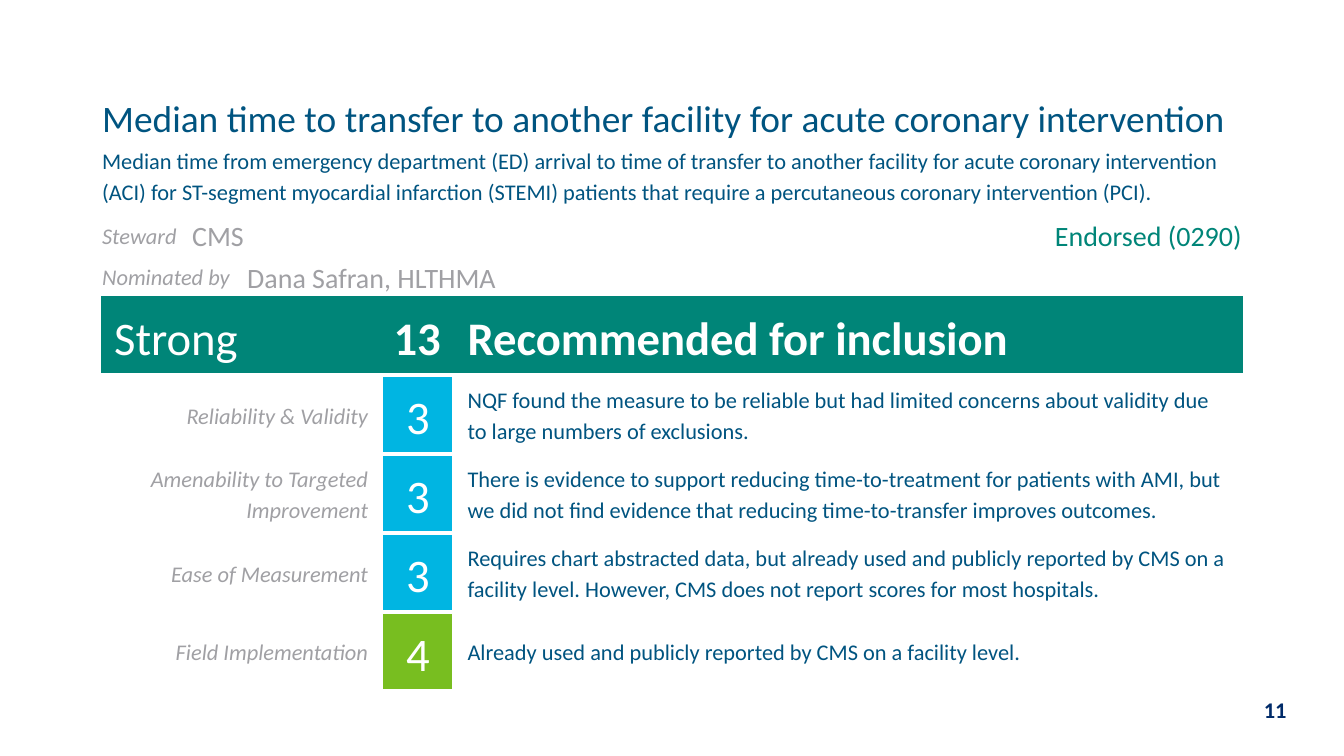
from dataclasses import dataclass, replace
from typing import Optional

from lxml import etree
from pptx import Presentation
from pptx import util as u
from pptx.dml.color import RGBColor
from pptx.enum import text
from pptx.oxml.ns import qn

COLORS = {
    "navy": "002B69", "blue": "005480", "gray": "A0A0A4", "teal": "008578",
    "cyan": "00B5E2", "green": "78BE20", "white": "FFFFFF",
}
ALIGN = {"l": text.PP_ALIGN.LEFT, "c": text.PP_ALIGN.CENTER, "r": text.PP_ALIGN.RIGHT}
SLIDE_WIDTH = 10
COLUMN_WIDTHS = [0.67, 0.41, 0.7, 0.31, 0.54, 3.29, 2.58]
INTRO_HEIGHTS = [0.4, 0.53, 0.3, 0.31]
RATING_HEIGHT = 0.58
TIGHT = (0.01, 0.01, 0.1, 0)
ROOMY = (0.1, 0.05, 0.1, 0.05)


@dataclass(frozen=True)
class Entry:
    row: int
    column: int
    span: int
    words: str
    size: float = 12
    color: str = "blue"
    bold: bool = False
    italic: bool = False
    align: str = "l"
    anchor: text.MSO_ANCHOR = text.MSO_ANCHOR.MIDDLE
    insets: tuple[float, float, float, float] = ROOMY
    fill: Optional[str] = None
    edges: str = ""


@dataclass(frozen=True)
class Criterion:
    name: str
    score: str
    finding: str
    color: str = "cyan"


def rgb(name: str) -> RGBColor:
    return RGBColor.from_string(COLORS[name])


def write(frame, words: str, *, size: float, color: str, bold: bool = False,
          italic: bool = False, align: str = "l", spacing: float = 1.0) -> None:
    paragraph = frame.paragraphs[0]
    paragraph.alignment = ALIGN[align]
    paragraph.line_spacing = spacing
    run = paragraph.add_run()
    run.text = words
    run.font.name = "Calibri"
    run.font.size = u.Pt(size)
    run.font.bold = bold
    run.font.italic = italic
    run.font.color.rgb = rgb(color)


def draw_edges(cell, white_edges: str) -> None:
    properties = cell._tc.get_or_add_tcPr()
    for side in "LRTB":
        line = etree.SubElement(properties, qn(f"a:ln{side}"), w=str(u.Pt(2.25)))
        if side in white_edges:
            paint = etree.SubElement(line, qn("a:solidFill"))
            etree.SubElement(paint, qn("a:srgbClr"), val=COLORS["white"])
        else:
            etree.SubElement(line, qn("a:noFill"))


def draw_entry(table, entry: Entry) -> None:
    first = table.cell(entry.row, entry.column)
    last_column = entry.column + entry.span - 1
    if entry.span > 1:
        first.merge(table.cell(entry.row, last_column))
    for column in range(entry.column, last_column + 1):
        cell = table.cell(entry.row, column)
        draw_edges(cell, entry.edges)
        if entry.fill:
            cell.fill.solid()
            cell.fill.fore_color.rgb = rgb(entry.fill)
        else:
            cell.fill.background()
    first.vertical_anchor = entry.anchor
    (first.margin_left, first.margin_top,
     first.margin_right, first.margin_bottom) = map(u.Inches, entry.insets)
    write(first.text_frame, entry.words, size=entry.size, color=entry.color,
          bold=entry.bold, italic=entry.italic, align=entry.align, spacing=1.15)


def criterion_entries(row: int, criterion: Criterion) -> list[Entry]:
    return [
        Entry(row, 0, 4, criterion.name, color="gray", italic=True, align="r", edges="LRTB"),
        Entry(row, 4, 1, criterion.score, size=25, color="white", align="c",
              fill=criterion.color, edges="LRTB"),
        Entry(row, 5, 2, criterion.finding, edges="LRTB"),
    ]


CRITERIA = [
    Criterion("Reliability & Validity", "3",
              "NQF found the measure to be reliable but had limited concerns about "
              "validity due to large numbers of exclusions."),
    Criterion("Amenability to Targeted Improvement", "3",
              "There is evidence to support reducing time-to-treatment for patients with "
              "AMI, but we did not find evidence that reducing time-to-transfer improves "
              "outcomes."),
    Criterion("Ease of Measurement", "3",
              "Requires chart abstracted data, but already used and publicly reported by "
              "CMS on a facility level. However, CMS does not report scores for most "
              "hospitals."),
    Criterion("Field Implementation", "4",
              "Already used and publicly reported by CMS on a facility level.", "green"),
]

label = Entry(2, 0, 1, "Steward", color="gray", italic=True, insets=TIGHT)
detail = Entry(2, 1, 5, "CMS", size=15, color="gray", insets=TIGHT)
rating = Entry(4, 0, 3, "Strong", size=25, color="white", fill="teal", edges="B")
ENTRIES = [
    Entry(0, 0, 7, "Median time to transfer to another facility for acute coronary intervention",
          size=20, insets=TIGHT),
    Entry(1, 0, 7,
          "Median time from emergency department (ED) arrival to time of transfer to another "
          "facility for acute coronary intervention (ACI) for ST-segment myocardial infarction "
          "(STEMI) patients that require a percutaneous coronary intervention (PCI).",
          anchor=text.MSO_ANCHOR.TOP, insets=(0.01, 0.01, 0.1, 0.05)),
    label,
    detail,
    Entry(2, 6, 1, "Endorsed (0290)", size=15, color="teal", align="r",
          insets=(0.1, 0.01, 0.01, 0)),
    replace(label, row=3, span=2, words="Nominated by"),
    replace(detail, row=3, column=2, words="Dana Safran, HLTHMA"),
    rating,
    replace(rating, column=3, span=2, words="13", bold=True, align="r"),
    replace(rating, column=5, span=2, words="Recommended for inclusion", bold=True),
]


def main() -> None:
    presentation = Presentation()
    presentation.slide_width = u.Inches(SLIDE_WIDTH)
    presentation.slide_height = u.Inches(SLIDE_WIDTH * 9 / 16)
    slide = presentation.slides.add_slide(presentation.slide_layouts[6])

    heights = INTRO_HEIGHTS + [RATING_HEIGHT] * (1 + len(CRITERIA))
    table = slide.shapes.add_table(
        len(heights), len(COLUMN_WIDTHS), u.Inches(0.75), u.Inches(0.66),
        u.Inches(sum(COLUMN_WIDTHS)), u.Inches(sum(heights))).table
    table.first_row = False
    table.horz_banding = False
    for column, width in zip(table.columns, COLUMN_WIDTHS):
        column.width = u.Inches(width)
    for row, height in zip(table.rows, heights):
        row.height = u.Inches(height)
    for entry in ENTRIES:
        draw_entry(table, entry)
    for row, criterion in enumerate(CRITERIA, start=len(INTRO_HEIGHTS) + 1):
        for entry in criterion_entries(row, criterion):
            draw_entry(table, entry)

    page_number = slide.shapes.add_textbox(
        u.Inches(7.59), u.Inches(5.18), u.Inches(2.08), u.Inches(0.2)).text_frame
    page_number.word_wrap = True
    page_number.vertical_anchor = text.MSO_ANCHOR.MIDDLE
    write(page_number, "11", size=12, color="navy", bold=True, align="r")

    presentation.save("out.pptx")


if __name__ == "__main__":
    main()
